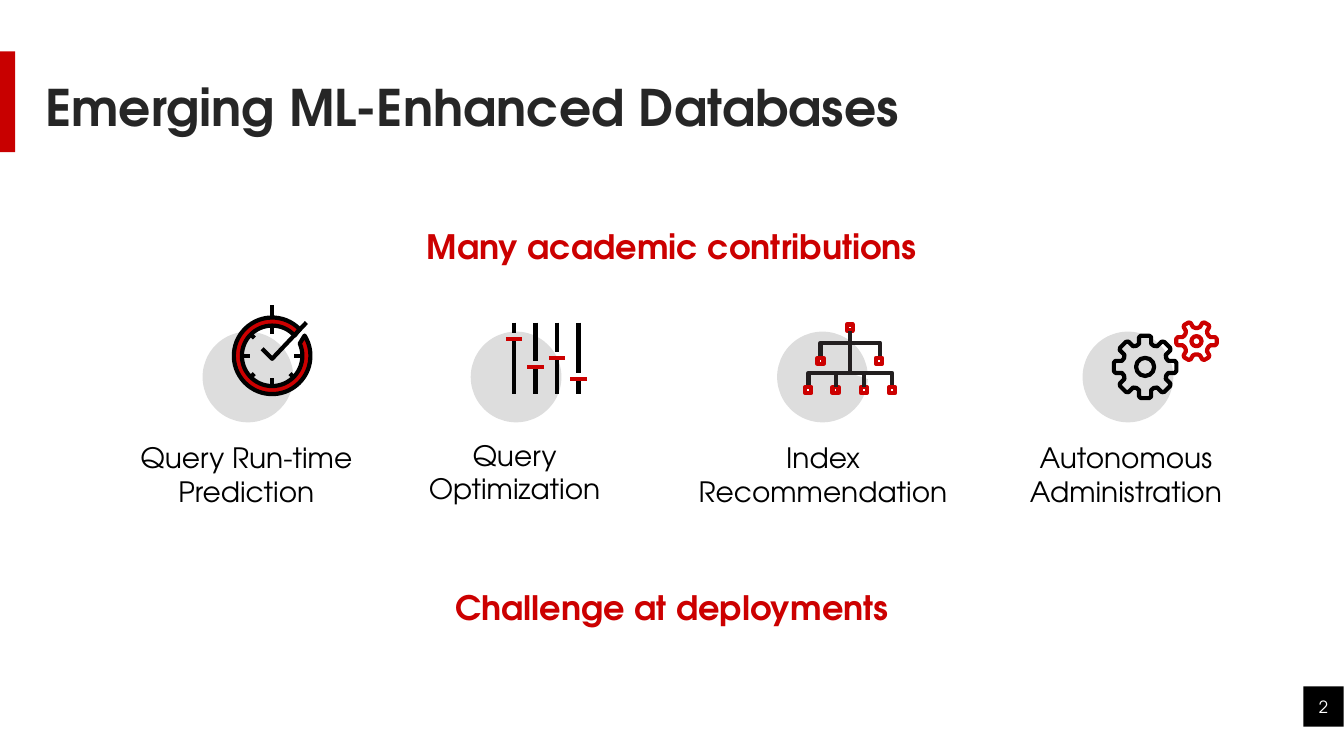
from math import cos, radians, sin

from lxml.etree import SubElement
from pptx import Presentation
from pptx.dml.color import RGBColor
from pptx.enum.shapes import MSO_CONNECTOR as Link, MSO_SHAPE as Preset
from pptx.enum.text import MSO_ANCHOR as Anchor, MSO_AUTO_SIZE as Fit, PP_ALIGN as Align
from pptx.oxml.ns import qn
from pptx.util import Inches, Pt

FONT = "TeX Gyre Adventor"
COLORS = {
    "bar": "C80000", "red": "CC0000", "black": "000000", "white": "FFFFFF",
    "title": "262626", "disc": "DDDDDD", "branch": "231F20",
}
STROKE = 3
DISC_TOP, DISC_SIZE = 32.9, 9


def grid(cells):
    """Ten grid cells, across or down, make one inch."""
    return Inches(cells / 10)


def rgb(name):
    return RGBColor.from_string(COLORS[name])


def paint(shape, fill=None, line=None):
    shape.shadow.inherit = False
    if fill:
        shape.fill.solid()
        shape.fill.fore_color.rgb = rgb(fill)
    else:
        shape.fill.background()
    if line:
        shape.line.color.rgb = rgb(line)
        shape.line.width = Pt(STROKE)
    else:
        shape.line.fill.background()


def add_preset(shapes, kind, left, top, width, height, **colors):
    shape = shapes.add_shape(kind, grid(left), grid(top), grid(width), grid(height))
    paint(shape, **colors)
    return shape


def add_line(shapes, start, end, color="black"):
    line = shapes.add_connector(Link.STRAIGHT, *(grid(v) for v in (*start, *end)))
    line.line.color.rgb = rgb(color)
    line.line.width = Pt(STROKE)
    SubElement(line._element.spPr, qn("a:effectLst"))
    return line


def add_outline(shapes, points, closed=False, **colors):
    first, *rest = [(grid(x), grid(y)) for x, y in points]
    builder = shapes.build_freeform(*first, scale=1.0)
    builder.add_line_segments(rest, close=closed)
    paint(builder.convert_to_shape(), **colors)


def add_text(page, text, left, top, width, height, size=20, color="black", bold=False,
             align=Align.CENTER, anchor=Anchor.TOP, spacing=None, before=None, fit=Fit.NONE):
    box = page.shapes.add_textbox(grid(left), grid(top), grid(width), grid(height))
    frame = box.text_frame
    frame.word_wrap = True
    frame.auto_size = fit
    frame.vertical_anchor = anchor
    for index, words in enumerate(text.split("\n")):
        para = frame.add_paragraph() if index else frame.paragraphs[0]
        para.alignment = align
        para.line_spacing = spacing
        para.space_before = before
        span = para.add_run()
        span.text = words
        span.font.name = FONT
        span.font.size = Pt(size)
        span.font.bold = bold
        span.font.color.rgb = rgb(color)


def polar(center, radius, angle):
    turn = radians(angle)
    return center[0] + radius * cos(turn), center[1] + radius * sin(turn)


def draw_clock(shapes):
    center = (27, 35.3)
    # Ring with a gap at the upper right
    outer = [polar(center, 3.8, angle) for angle in range(-32, 317, 6)]
    inner = [polar(center, 3, angle) for angle in range(318, -29, -6)]
    add_outline(shapes, outer + inner, closed=True, fill="red", line="black")
    # Stem, hour marks and check-mark hand
    add_line(shapes, (27, 31.6), (27, 30.3))
    for angle in (0, 45, 90, 135, 180, 225, 270):
        reach = 2.5 if angle % 90 else 2.2
        add_line(shapes, polar(center, 3.1, angle), polar(center, reach, angle))
    add_outline(shapes, [(26, 34.6), (27, 35.6), (30.4, 32)], line="black")


def draw_sliders(shapes):
    for index, knob in enumerate((33.6, 36.4, 35.5, 37.6)):
        x = 51 + 2.13 * index
        add_line(shapes, (x, 32), (x, knob - 0.6))
        add_line(shapes, (x, knob), (x, 39.1))
        add_line(shapes, (x - 0.8, knob), (x + 0.8, knob), "red")


def draw_tree(shapes):
    middle, fork, split, leaf_top, side = 84.3, 34, 37, 38.4, 0.6

    def add_node(x, top, fill="white"):
        return add_preset(shapes, Preset.RECTANGLE, x - side / 2, top, side, side,
                          fill=fill, line="red")

    # Elbow branches
    for x, height, foot, fill in ((81.4, fork, 35.5, None), (80.2, split, leaf_top, None),
                                  (87.3, fork, 35.5, None), (88.5, split, leaf_top, "white")):
        add_outline(shapes, [(x, foot), (x, height), (middle, height)],
                    fill=fill, line="branch")
    # Nodes and straight branches
    root = add_node(middle, 32.2)
    trunk = add_line(shapes, (middle, 32.9), (middle, split), "branch")
    trunk.begin_connect(root, 2)
    add_node(81.4, 35.5)
    add_node(87.2, 35.5, fill=None)
    for x in (80.2, 88.5):
        add_node(x, leaf_top)
    for x in (82.9, 85.7):
        leaf = add_node(x, leaf_top)
        branch = add_line(shapes, (x, leaf_top), (x, split), "branch")
        branch.begin_connect(leaf, 0)


def draw_gear(shapes, center, teeth, profile, hole, color):
    half = [(out, -across) for out, across in profile]
    tooth = half + list(reversed(profile))
    points = []
    for index in range(teeth):
        turn = radians(360 / teeth * index)
        points += [(center[0] + out * cos(turn) - across * sin(turn),
                    center[1] + out * sin(turn) + across * cos(turn))
                   for out, across in tooth]
    add_outline(shapes, points, closed=True, line=color)
    add_preset(shapes, Preset.OVAL, center[0] - hole, center[1] - hole,
               2 * hole, 2 * hole, line=color)


def draw_gears(shapes):
    draw_gear(shapes, (113.6, 36.4), 8, [(2.1, 0.85), (2.3, 0.6), (2.95, 0.6), (3.1, 0.4)],
              0.9, "black")
    draw_gear(shapes, (118.7, 33.85), 6, [(1.2, 0.55), (1.4, 0.4), (1.85, 0.4), (2, 0.25)],
              0.5, "red")


def main():
    deck = Presentation()
    deck.slide_width, deck.slide_height = grid(133.33), grid(75)
    page = deck.slides.add_slide(deck.slide_layouts[6])

    # Title bar and page number
    add_preset(page.shapes, Preset.RECTANGLE, 0, 5.1, 1.5, 10, fill="bar")
    add_preset(page.shapes, Preset.RECTANGLE, 129.3, 68.1, 4, 4, fill="black")
    add_text(page, "Emerging ML-Enhanced Databases", 3.5, 3.4, 115, 15, size=36,
             color="title", bold=True, align=Align.LEFT, anchor=Anchor.MIDDLE, spacing=0.9)
    add_text(page, "2", 128.6, 68.1, 5.4, 4, size=12, color="white", anchor=Anchor.MIDDLE)

    # Red statements above and below the topics
    for statement, top in (("Many academic contributions", 22.4),
                           ("Challenge at deployments", 58.2)):
        add_text(page, statement, 39.5, top, 54.3, 5.1, size=24, color="red", bold=True,
                 spacing=0.9, before=Pt(10))

    # Topics: disc, icon and label
    topics = (
        ("Query Run-time\nPrediction", 12.3, 43.2, 24.3, 20.1, draw_clock),
        ("Query\nOptimization", 40.8, 43, 20.5, 46.7, draw_sliders),
        ("Index\nRecommendation", 68.2, 43.2, 26.9, 77.1, draw_tree),
        ("Autonomous\nAdministration", 96.7, 43.2, 30, 107.4, draw_gears),
    )
    for label, left, top, width, disc_left, draw_icon in topics:
        add_preset(page.shapes, Preset.OVAL, disc_left, DISC_TOP, DISC_SIZE, DISC_SIZE,
                   fill="disc")
        draw_icon(page.shapes.add_group_shape().shapes)
        add_text(page, label, left, top, width, 7.7, fit=Fit.SHAPE_TO_FIT_TEXT)

    deck.save("out.pptx")


if __name__ == "__main__":
    main()
